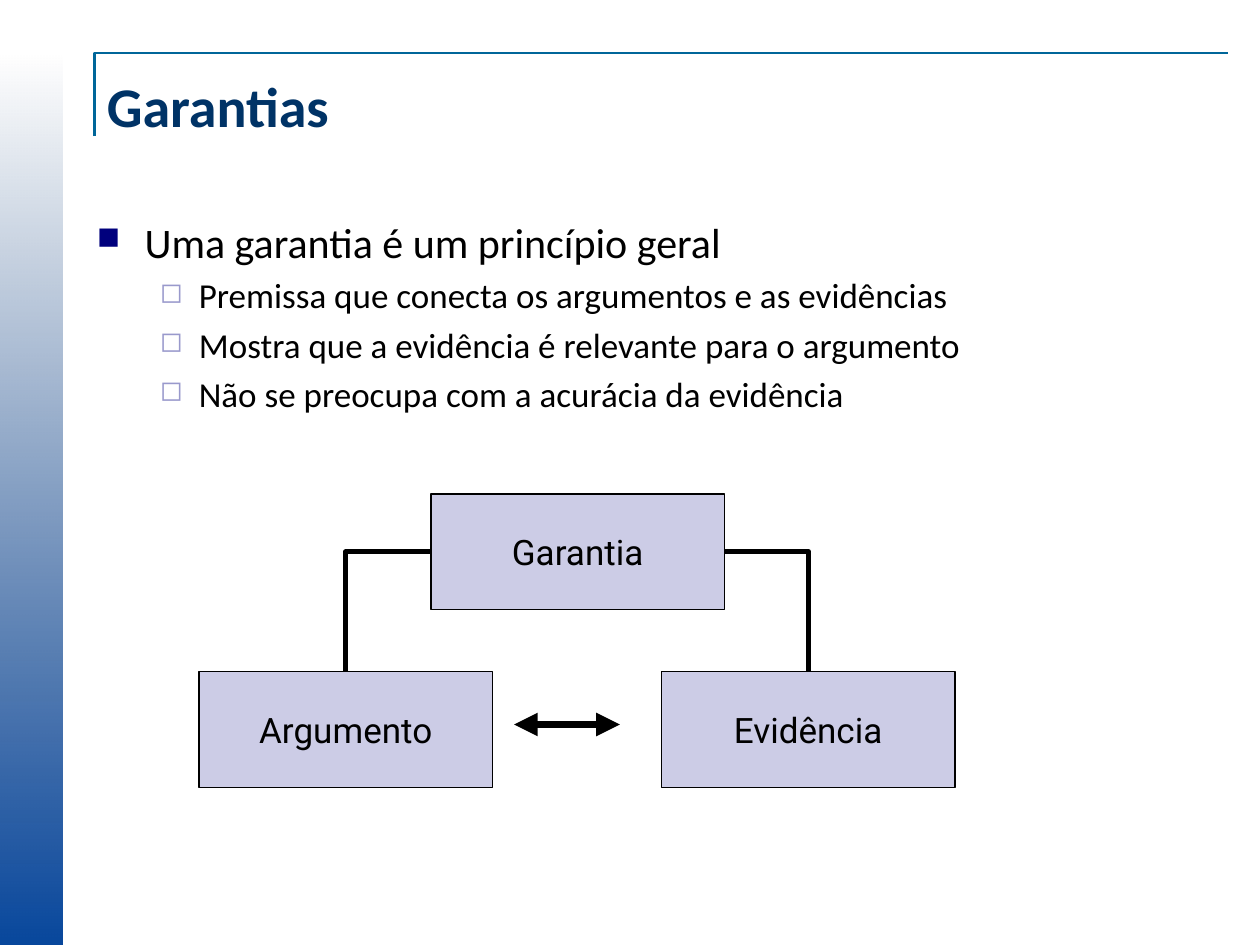
"""Build the slide on warrants linking arguments and evidence."""
from lxml.etree import SubElement
from pptx import Presentation
from pptx.dml.color import RGBColor
from pptx.enum.shapes import MSO_CONNECTOR, MSO_SHAPE
from pptx.enum.text import MSO_ANCHOR, PP_ALIGN
from pptx.oxml.ns import qn
from pptx.util import Inches, Pt

BLACK = RGBColor(0x00, 0x00, 0x00)
NAVY = RGBColor(0x00, 0x33, 0x66)
TEAL = RGBColor(0x00, 0x66, 0x99)
BAND_BLUE = RGBColor(0x08, 0x47, 0x9C)
BAND_FADE = RGBColor(0x06, 0x33, 0x70)
LAVENDER = RGBColor(0xCC, 0xCC, 0xE6)
MAIN_BULLET = RGBColor(0x00, 0x00, 0x7D)
SUB_BULLET = RGBColor(0x99, 0x99, 0xCC)

TITLE_FORMAT = {"name": "Calibri", "size": Pt(32), "bold": True}
MAIN_FORMAT = {"name": "Calibri", "size": Pt(24)}
SUB_FORMAT = {"name": "Calibri", "size": Pt(20)}
BOX_FORMAT = {"name": "Roboto", "size": Pt(20)}


def write(paragraph, text, formats, color):
    run = paragraph.add_run()
    run.text = text
    for key, value in formats.items():
        setattr(run.font, key, value)
    run.font.color.rgb = color


def style_link(link, width):
    link.line.color.rgb = BLACK
    link.line.width = Pt(width)
    SubElement(link._element.spPr, qn("a:effectLst"))


deck = Presentation()
deck.slide_width, deck.slide_height = Inches(10), Inches(7.5)
slide = deck.slides.add_slide(deck.slide_layouts[6])
shapes = slide.shapes

band = shapes.add_shape(MSO_SHAPE.RECTANGLE, 0, Inches(0.42), Inches(0.5), Inches(7.08))
band.shadow.inherit = False
band.line.fill.background()
band.fill.gradient()
band.fill.gradient_angle = 90
for stop, color, position in zip(band.fill.gradient_stops, (BAND_BLUE, BAND_FADE), (0, 1)):
    stop.color.rgb = color
    stop.position = position
fade = band._element.spPr.findall(".//" + qn("a:srgbClr"))[-1]
SubElement(fade, qn("a:alpha"), val="0")

outline = shapes.build_freeform(Inches(0.75), Inches(1.08))
outline.add_line_segments(
    [(Inches(0.75), Inches(0.42)), (Inches(9.75), Inches(0.42))], close=False
)
frame = outline.convert_to_shape()
frame.shadow.inherit = False
frame.fill.background()
frame.line.color.rgb = TEAL
frame.line.width = Pt(1.5)

title = shapes.add_textbox(Inches(0.75), Inches(0.42), Inches(8.92), Inches(0.83)).text_frame
title.word_wrap = True
title.vertical_anchor = MSO_ANCHOR.MIDDLE
write(title.paragraphs[0], "Garantias", TITLE_FORMAT, NAVY)

body = shapes.add_textbox(Inches(0.67), Inches(1.67), Inches(9), Inches(5.17)).text_frame
body.word_wrap = True
points = [
    (0, "Uma garantia é um princípio geral"),
    (1, "Premissa que conecta os argumentos e as evidências"),
    (1, "Mostra que a evidência é relevante para o argumento"),
    (1, "Não se preocupa com a acurácia da evidência"),
]
levels = [
    (0.38, 0.38, "■", MAIN_BULLET, 75, MAIN_FORMAT),
    (0.81, 0.31, "◻", SUB_BULLET, 80, SUB_FORMAT),
]
for index, (level, text) in enumerate(points):
    margin, hanging, mark, mark_color, percent, formats = levels[level]
    point = body.add_paragraph() if index else body.paragraphs[0]
    point.level = level
    properties = point._p.get_or_add_pPr()
    properties.set("marL", str(Inches(margin)))
    properties.set("indent", str(-Inches(hanging)))
    bullet_color = SubElement(properties, qn("a:buClr"))
    SubElement(bullet_color, qn("a:srgbClr"), val=str(mark_color))
    SubElement(properties, qn("a:buSzPct"), val=str(percent * 1000))
    SubElement(properties, qn("a:buChar"), char=mark)
    if index:
        point.space_before = Pt(4)
    write(point, text, formats, BLACK)

boxes = {}
for label, left, top in [
    ("Argumento", 1.58, 5.33),
    ("Evidência", 5.25, 5.33),
    ("Garantia", 3.42, 3.92),
]:
    box = shapes.add_shape(
        MSO_SHAPE.RECTANGLE, Inches(left), Inches(top), Inches(2.33), Inches(0.92)
    )
    box.shadow.inherit = False
    box.fill.solid()
    box.fill.fore_color.rgb = LAVENDER
    box.line.color.rgb = BLACK
    box.line.width = Pt(0.75)
    box.text_frame.word_wrap = False
    box.text_frame.vertical_anchor = MSO_ANCHOR.MIDDLE
    caption = box.text_frame.paragraphs[0]
    caption.alignment = PP_ALIGN.CENTER
    write(caption, label, BOX_FORMAT, BLACK)
    boxes[label] = box

exchange = shapes.add_connector(
    MSO_CONNECTOR.STRAIGHT, Inches(4.08), Inches(5.75), Inches(4.92), Inches(5.75)
)
style_link(exchange, 4.5)
for end in ("a:headEnd", "a:tailEnd"):
    SubElement(exchange.line._get_or_add_ln(), qn(end), type="triangle")

for label, side in [("Argumento", 1), ("Evidência", 3)]:
    branch = shapes.add_connector(MSO_CONNECTOR.ELBOW, 0, 0, 0, 0)
    branch.begin_connect(boxes["Garantia"], side)
    branch.end_connect(boxes[label], 0)
    branch._element.spPr.find(qn("a:prstGeom")).set("prst", "bentConnector2")
    style_link(branch, 3)

deck.save("out.pptx")
